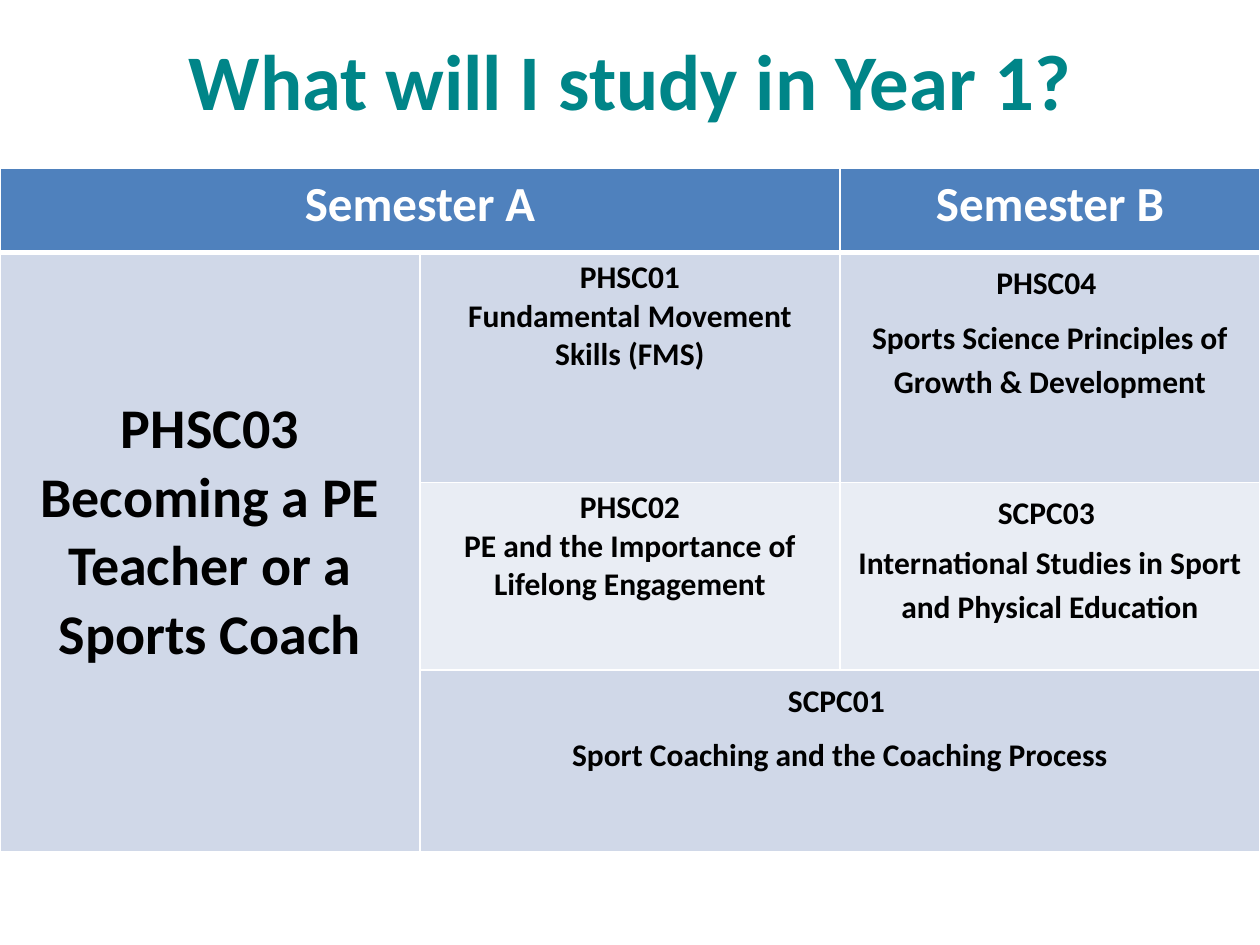
from lxml import etree
from pptx import Presentation
from pptx import util as u
from pptx.dml.color import RGBColor
from pptx.enum import text
from pptx.oxml import ns

TEAL = RGBColor(0x00, 0x85, 0x88)
WHITE = RGBColor(0xFF, 0xFF, 0xFF)
BLACK = RGBColor(0x00, 0x00, 0x00)
BLUE = RGBColor(0x4F, 0x81, 0xBD)
LIGHT = RGBColor(0xD0, 0xD8, 0xE8)
PALE = RGBColor(0xE9, 0xED, 0xF4)


def style(para, size, color):
    para.alignment = text.PP_ALIGN.CENTER
    for span in para.runs:
        span.font.name = "Calibri"
        span.font.size = u.Pt(size)
        span.font.bold = True
        span.font.color.rgb = color


def add_border(cell, side, width):
    """Draw a white line on one side (L, R, T or B) of a cell."""
    line = etree.SubElement(cell._tc.get_or_add_tcPr(), ns.qn(f"a:ln{side}"), w=str(u.Pt(width)))
    fill = etree.SubElement(line, ns.qn("a:solidFill"))
    etree.SubElement(fill, ns.qn("a:srgbClr"), val=str(WHITE))


deck = Presentation()
deck.slide_width, deck.slide_height = u.Cm(25.4), u.Cm(19.05)
page = deck.slides.add_slide(deck.slide_layouts[5])

title = page.shapes.title
title.left, title.top, title.width, title.height = u.Cm(1.27), u.Cm(0), u.Cm(22.86), u.Cm(3.18)
title.text_frame.text = "What will I study in Year 1?"
title.text_frame.vertical_anchor = text.MSO_ANCHOR.MIDDLE
style(title.text_frame.paragraphs[0], 45, TEAL)

row_heights = [1.7, 4.64, 3.78, 3.66]
row_fills = [BLUE, LIGHT, PALE, LIGHT]
frame = page.shapes.add_table(4, 3, u.Cm(0), u.Cm(3.39), deck.slide_width, u.Cm(sum(row_heights)))
table = frame.table
for column in table.columns:
    column.width = deck.slide_width // 3
for row, height in zip(table.rows, row_heights):
    row.height = u.Cm(height)

for index, (row, fill) in enumerate(zip(table.rows, row_fills)):
    for cell in row.cells:
        for side in "LRTB":
            under_header = (index, side) in [(0, "B"), (1, "T")]
            add_border(cell, side, 3 if under_header else 1)
        cell.fill.solid()
        cell.fill.fore_color.rgb = fill

for first, last in [((0, 0), (0, 1)), ((1, 0), (3, 0)), ((3, 1), (3, 2))]:
    table.cell(*first).merge(table.cell(*last))

# row, column, wording, size, line spacing, space after
entries = [
    (0, 0, "Semester A", 28, None, None),
    (0, 2, "Semester B", 28, None, None),
    (1, 0, "PHSC03\nBecoming a PE Teacher or a Sports Coach", 32, None, None),
    (1, 1, "PHSC01\nFundamental Movement Skills (FMS)", 18, None, None),
    (1, 2, "PHSC04 \nSports Science Principles of Growth & Development", 18, 1.15, 6),
    (2, 1, "PHSC02\nPE and the Importance of Lifelong Engagement", 18, None, None),
    (2, 2, "SCPC03 \nInternational Studies in Sport and Physical Education", 18, 1.15, 3),
    (3, 1, "SCPC01 \nSport Coaching and the Coaching Process", 18, 1.15, 6),
]
for row, column, wording, size, spacing, after in entries:
    cell = table.cell(row, column)
    cell.text_frame.text = wording
    for para in cell.text_frame.paragraphs:
        style(para, size, WHITE if row == 0 else BLACK)
        if spacing:
            para.line_spacing = spacing
            para.space_after = u.Pt(after)

table.cell(1, 0).margin_top = u.Cm(2.88)

deck.save("out.pptx")
